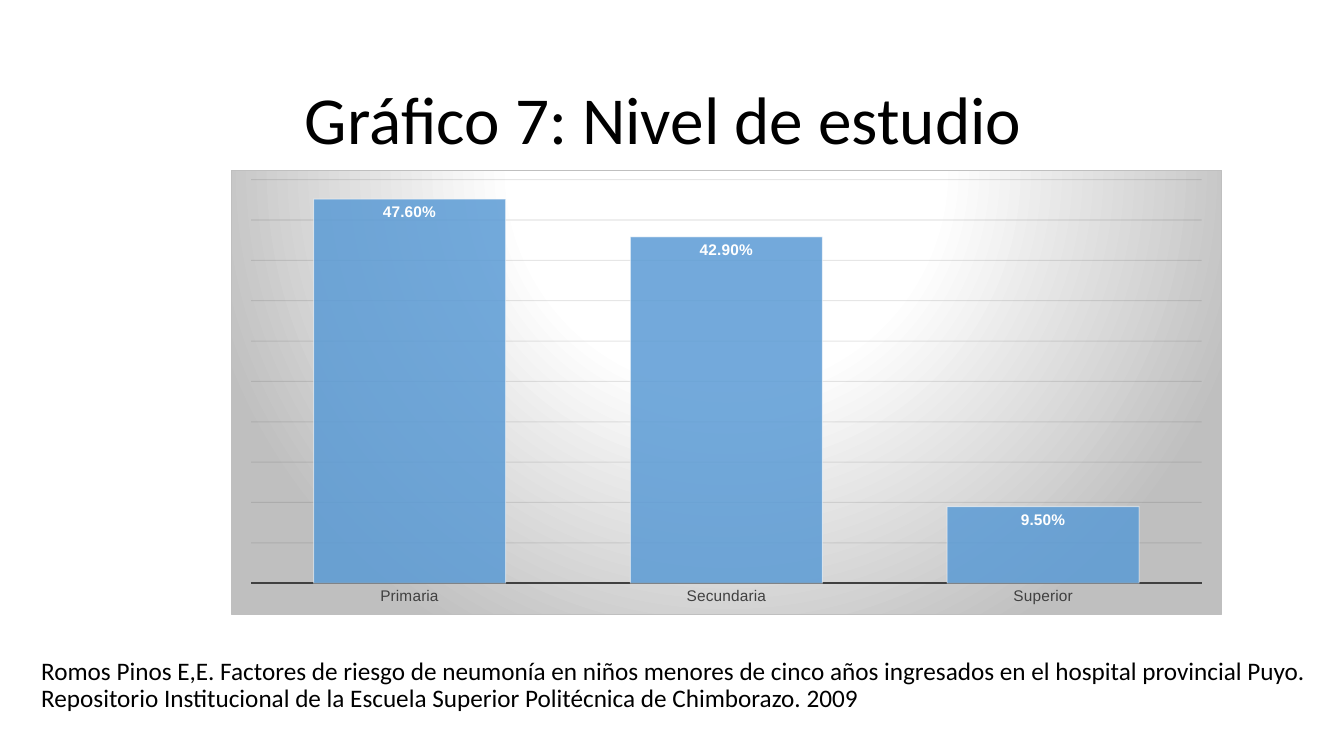
from lxml import etree
from pptx import Presentation
from pptx.chart.data import CategoryChartData
from pptx.dml.color import RGBColor
from pptx.enum import chart as kinds, text
from pptx.oxml import parse_xml
from pptx.oxml.ns import nsdecls, qn
from pptx.util import Inches, Pt

BLACK = RGBColor(0x00, 0x00, 0x00)
WHITE = RGBColor(0xFF, 0xFF, 0xFF)
DARK = RGBColor(0x40, 0x40, 0x40)
GRID = RGBColor(0x0D, 0x0D, 0x0D)
BLUE = RGBColor(0x5B, 0x9B, 0xD5)

deck = Presentation()
deck.slide_width, deck.slide_height = Inches(13.33), Inches(7.5)
slide = deck.slides.add_slide(deck.slide_layouts[6])


def add_text(words, box, size, align=text.PP_ALIGN.LEFT, before=0):
    frame = slide.shapes.add_textbox(*map(Inches, box)).text_frame
    frame.word_wrap = True
    frame.vertical_anchor = text.MSO_ANCHOR.MIDDLE
    para = frame.paragraphs[0]
    para.alignment, para.line_spacing = align, 0.9
    para.space_before = Pt(before)
    run = para.add_run()
    run.text = words
    run.font.name, run.font.size = "Calibri", Pt(size)
    run.font.color.rgb = BLACK


def set_alpha(fill, percent):
    color = fill._xPr.find(".//" + qn("a:srgbClr"))
    etree.SubElement(color, qn("a:alpha")).set("val", str(percent * 1000))


# Title and source
add_text("Gráfico 7: Nivel de estudio ", (1.19, 0.75, 10.93, 0.94), 48,
         align=text.PP_ALIGN.CENTER)
add_text("Romos Pinos E,E. Factores de riesgo de neumonía en niños menores de "
         "cinco años ingresados en el hospital provincial Puyo. Repositorio "
         "Institucional de la Escuela Superior Politécnica de Chimborazo. 2009",
         (0.31, 6.11, 13.02, 1.39), 18, before=10)

# Column chart
data = CategoryChartData(number_format="0.00%")
data.categories = ["Primaria", "Secundaria", "Superior"]
data.add_series("Series 1", (0.476, 0.429, 0.095))
chart = slide.shapes.add_chart(
    kinds.XL_CHART_TYPE.COLUMN_CLUSTERED, Inches(2.29), Inches(1.69),
    Inches(9.83), Inches(4.41), data).chart
chart.has_legend = chart.has_title = False
chart.font.name, chart.font.size = "Arial", Pt(11)
chart.font.color.rgb = BLACK

# Axes
cat = chart.category_axis
cat.major_tick_mark = kinds.XL_TICK_MARK.NONE
cat.tick_labels.font.name, cat.tick_labels.font.size = "Arial", Pt(11)
cat.tick_labels.font.color.rgb = DARK
cat.format.line.color.rgb = DARK
cat.format.line.width = Pt(1.5)
val = chart.value_axis
val.visible = False
val.minimum_scale, val.maximum_scale, val.major_unit = 0, 0.5, 0.05
val.has_major_gridlines = True
grid = val.major_gridlines.format.line
grid.color.rgb = GRID
grid.width = Pt(0.75)
set_alpha(grid.fill, 10)

# Bars and labels
plot = chart.plots[0]
plot.gap_width = 65
plot.vary_by_categories = False
bars = plot.series[0]
bars.format.fill.solid()
bars.format.fill.fore_color.rgb = BLUE
set_alpha(bars.format.fill, 85)
edge = bars.format.line
edge.color.rgb = WHITE
edge.width = Pt(0.75)
set_alpha(edge.fill, 50)
labels = bars.data_labels
labels.show_value = True
labels.position = kinds.XL_LABEL_POSITION.INSIDE_END
labels.number_format, labels.number_format_is_linked = "0.00%", False
labels.font.name, labels.font.size, labels.font.bold = "Arial", Pt(11), True
labels.font.color.rgb = WHITE

# Plot area position
area = chart._chartSpace.chart.plotArea
for old in area.findall(qn("c:layout")):
    area.remove(old)
area.insert(0, parse_xml(
    f'<c:layout {nsdecls("c")}><c:manualLayout><c:layoutTarget val="inner"/>'
    '<c:xMode val="edge"/><c:yMode val="edge"/><c:x val="0.02"/>'
    '<c:y val="0.02"/><c:w val="0.96"/><c:h val="0.91"/>'
    '</c:manualLayout></c:layout>'))

# Radial background and border
stops = "".join(
    f'<a:gs pos="{pos * 1000}"><a:srgbClr val="{tone}"/></a:gs>'
    for pos, tone in ((0, "FFFFFF"), (39, "FFFFFF"), (100, "BFBFBF")))
chart._chartSpace.chart.addnext(parse_xml(
    f'<c:spPr {nsdecls("c", "a")}><a:gradFill><a:gsLst>{stops}</a:gsLst>'
    '<a:path path="circle"><a:fillToRect l="50000" t="-80000" r="50000" '
    'b="180000"/></a:path></a:gradFill><a:ln w="9525"><a:solidFill>'
    '<a:srgbClr val="BFBFBF"/></a:solidFill></a:ln></c:spPr>'))

deck.save("out.pptx")
